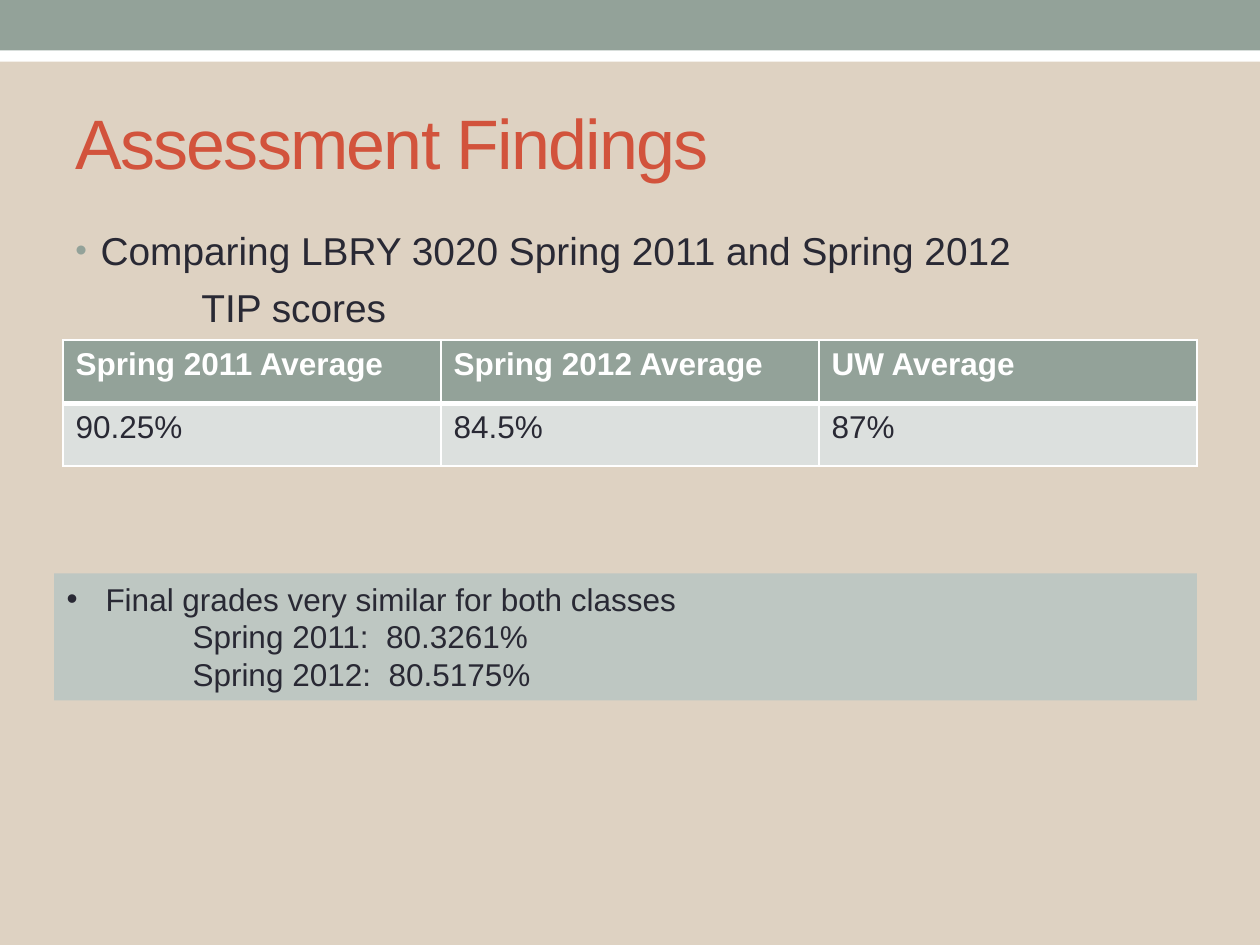
from dataclasses import dataclass

from lxml.etree import SubElement
from pptx import Presentation
from pptx.dml.color import RGBColor
from pptx.enum.shapes import MSO_SHAPE
from pptx.enum.text import MSO_ANCHOR
from pptx.oxml.ns import qn
from pptx.slide import Slide
from pptx.util import Inches, Pt

COLORS = {
    "sand": "DED2C2",
    "sage": "93A299",
    "pale_sage": "BEC7C2",
    "mist": "DCE0DE",
    "rust": "D2533C",
    "ink": "292934",
    "white": "FFFFFF",
}


def color(name):
    """Return the named palette color."""
    return RGBColor.from_string(COLORS[name])


def write(para, text, *, size=18, fill="ink", bold=False, font="Arial", tracking=0,
          left=0, hanging=0, before=0, bullet=None, bullet_size=100):
    """Write formatted text into a paragraph."""
    span = para.add_run()
    span.text = text
    span.font.name = font
    span.font.size = Pt(size)
    span.font.bold = bold
    span.font.color.rgb = color(fill)
    if tracking:
        span.font._element.set("spc", str(tracking * 100))
    para.space_before = Pt(before)
    properties = para._p.get_or_add_pPr()
    properties.set("marL", str(Inches(left)))
    properties.set("indent", str(Inches(-hanging)))
    if bullet:
        tint = SubElement(properties, qn("a:buClr"))
        SubElement(tint, qn("a:srgbClr"), val=COLORS[bullet])
        SubElement(properties, qn("a:buSzPct"), val=str(bullet_size * 1000))
        SubElement(properties, qn("a:buFont"), typeface="Arial")
        SubElement(properties, qn("a:buChar"), char="•")


def write_lines(frame, lines):
    """Fill a text frame with one paragraph per line."""
    frame.word_wrap = True
    for index, (text, style) in enumerate(lines):
        para = frame.add_paragraph() if index else frame.paragraphs[0]
        write(para, text, **style)


def set_border(cell, side, width):
    """Draw a white border on one side of a cell."""
    properties = cell._tc.get_or_add_tcPr()
    border = SubElement(properties, qn(f"a:ln{side}"), w=str(Pt(width)))
    fill = SubElement(border, qn("a:solidFill"))
    SubElement(fill, qn("a:srgbClr"), val=COLORS["white"])


@dataclass
class Painter:
    """Hold the current page and the style of its elements."""

    page: Slide
    border: float = 1
    divider: float = 3

    def background(self, fill):
        """Color the page background."""
        self.page.background.fill.solid()
        self.page.background.fill.fore_color.rgb = color(fill)

    def rectangle(self, area, fill):
        """Add a plain filled rectangle."""
        shape = self.page.shapes.add_shape(MSO_SHAPE.RECTANGLE, *map(Inches, area))
        shape.shadow.inherit = False
        shape.fill.solid()
        shape.fill.fore_color.rgb = color(fill)
        shape.line.fill.background()
        return shape

    def text(self, area, lines, anchor=MSO_ANCHOR.TOP):
        """Add a text box."""
        box = self.page.shapes.add_textbox(*map(Inches, area))
        box.text_frame.vertical_anchor = anchor
        write_lines(box.text_frame, lines)

    def panel(self, area, fill, lines):
        """Add a filled text panel."""
        box = self.page.shapes.add_textbox(*map(Inches, area))
        box.fill.solid()
        box.fill.fore_color.rgb = color(fill)
        write_lines(box.text_frame, lines)

    def table(self, area, rows):
        """Add a table with a header row."""
        frame = self.page.shapes.add_table(len(rows), len(rows[0]), *map(Inches, area))
        for row, values in enumerate(rows):
            header = row == 0
            for column, value in enumerate(values):
                cell = frame.table.cell(row, column)
                write(cell.text_frame.paragraphs[0], value, bold=header,
                      fill="white" if header else "ink")
                top, bottom = ((self.border, self.divider) if header
                               else (self.divider, self.border))
                widths = {"L": self.border, "R": self.border, "T": top, "B": bottom}
                for side, width in widths.items():
                    set_border(cell, side, width)
                cell.fill.solid()
                cell.fill.fore_color.rgb = color("sage" if header else "mist")


def main():
    """Build the assessment findings slide."""
    deck = Presentation()
    deck.slide_width, deck.slide_height = Inches(10), Inches(7.5)
    painter = Painter(deck.slides.add_slide(deck.slide_layouts[6]))
    painter.background("sand")
    painter.rectangle((0, 0.24, 10, 0.25), "white")
    painter.rectangle((0, 0, 10, 0.4), "sage")
    painter.text((0.5, 0.58, 9, 1.08), [
        ("Assessment Findings", {"size": 40, "fill": "rust", "tracking": -1}),
    ], anchor=MSO_ANCHOR.MIDDLE)
    body = {"size": 22.2, "before": 6}
    painter.text((0.5, 1.75, 9, 1.3), [
        ("Comparing LBRY 3020 Spring 2011 and Spring 2012",
         body | {"left": 0.2, "hanging": 0.2, "bullet": "sage", "bullet_size": 85}),
        ("TIP scores", body | {"left": 1}),
    ])
    painter.table((0.5, 2.7, 9, 1), [
        ("Spring 2011 Average", "Spring 2012 Average", "UW Average"),
        ("90.25%", "84.5%", "87%"),
    ])
    painter.panel((0.43, 4.55, 9.07, 1.01), "pale_sage", [
        ("Final grades very similar for both classes",
         {"left": 0.31, "hanging": 0.31, "bullet": "ink"}),
        ("Spring 2011:  80.3261%", {"left": 1}),
        ("Spring 2012:  80.5175%", {"left": 1}),
    ])
    deck.save("out.pptx")


if __name__ == "__main__":
    main()
